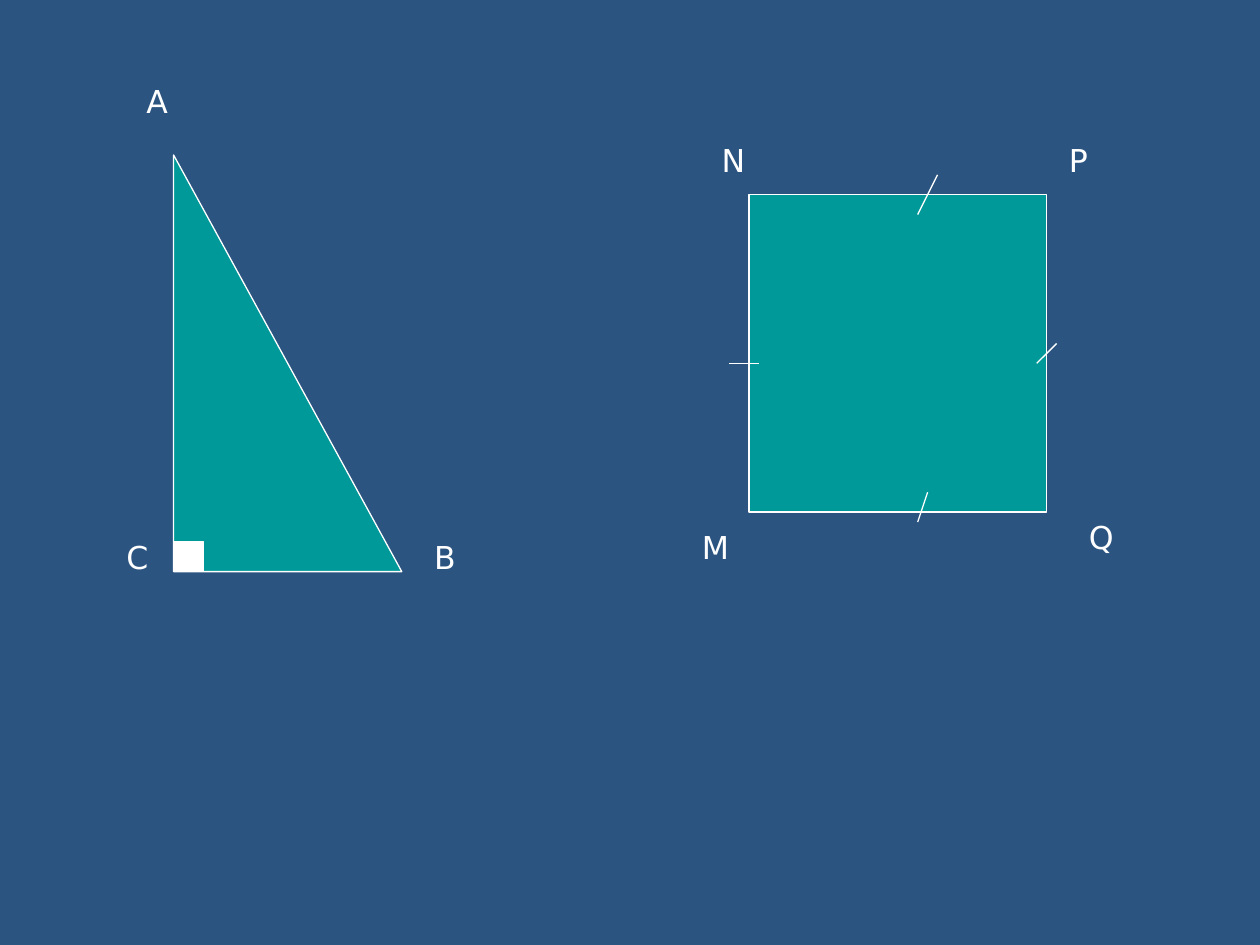
"""Draw a right triangle and a marked quadrilateral on a two-millimetre grid."""
from typing import NamedTuple

from lxml.etree import SubElement
from pptx import Presentation
from pptx.dml.color import RGBColor
from pptx.enum.shapes import MSO_CONNECTOR as Connector, MSO_SHAPE as Preset
from pptx.enum.text import MSO_AUTO_SIZE as AutoSize
from pptx.oxml.ns import qn
from pptx.shapes.shapetree import SlideShapes
from pptx.util import Inches, Mm, Pt

COLORS = {"background": "2B5481", "figure": "009999", "white": "FFFFFF"}
FONT = "DejaVu Sans"
CELL = Mm(2)
ORIGIN_COL, ORIGIN_ROW = 0.5, 0.62
LABEL_ROWS = 5


class Figure(NamedTuple):
    preset: Preset
    col: int
    row: int
    cols: int
    rows: int
    fill: str


class Vertex(NamedTuple):
    letter: str
    col: int
    row: int
    cols: int


class Tick(NamedTuple):
    start_col: int
    start_row: int
    end_col: int
    end_row: int


FIGURES = [
    Figure(Preset.RIGHT_TRIANGLE, 17, 15, 23, 42, "figure"),
    Figure(Preset.RECTANGLE, 75, 19, 30, 32, "figure"),
    Figure(Preset.RECTANGLE, 17, 54, 3, 3, "white"),
]
TRIANGLE_VERTICES = [
    Vertex("А", 13, 7, 6),
    Vertex("С", 11, 53, 6),
    Vertex("В", 42, 53, 6),
]
EQUAL_SIDE_TICKS = [
    Tick(73, 36, 76, 36),
    Tick(93, 49, 92, 52),
    Tick(104, 36, 106, 34),
    Tick(94, 17, 92, 21),
]
SQUARE_VERTICES = [
    Vertex("М", 69, 52, 5),
    Vertex("N", 71, 13, 5),
    Vertex("Р", 106, 13, 5),
    Vertex("Q", 108, 51, 5),
]


def color(name: str) -> RGBColor:
    return RGBColor.from_string(COLORS[name])


def x_at(col: int) -> int:
    return round((col + ORIGIN_COL) * CELL)


def y_at(row: int) -> int:
    return round((row + ORIGIN_ROW) * CELL)


def draw_figure(shapes: SlideShapes, figure: Figure) -> None:
    outline = shapes.add_shape(figure.preset, x_at(figure.col), y_at(figure.row),
                               figure.cols * CELL, figure.rows * CELL)
    outline.shadow.inherit = False
    outline.fill.solid()
    outline.fill.fore_color.rgb = color(figure.fill)
    outline.line.color.rgb = color("white")
    outline.line.width = Pt(0.75)


def draw_vertex(shapes: SlideShapes, vertex: Vertex) -> None:
    label = shapes.add_textbox(x_at(vertex.col), y_at(vertex.row),
                               vertex.cols * CELL, LABEL_ROWS * CELL)
    frame = label.text_frame
    frame.word_wrap = True
    frame.auto_size = AutoSize.SHAPE_TO_FIT_TEXT
    paragraph = frame.paragraphs[0]
    paragraph.text = vertex.letter
    paragraph.font.name = FONT
    paragraph.font.size = Pt(18)
    paragraph.font.color.rgb = color("white")


def draw_tick(shapes: SlideShapes, tick: Tick) -> None:
    mark = shapes.add_connector(Connector.STRAIGHT,
                                x_at(tick.start_col), y_at(tick.start_row),
                                x_at(tick.end_col), y_at(tick.end_row))
    mark.line.color.rgb = color("white")
    mark.line.width = Pt(0.75)
    SubElement(mark._element.spPr, qn("a:effectLst"))


def main() -> None:
    deck = Presentation()
    deck.slide_width, deck.slide_height = Inches(10), Inches(7.5)
    slide = deck.slides.add_slide(deck.slide_layouts[6])
    slide.background.fill.solid()
    slide.background.fill.fore_color.rgb = color("background")
    for figure in FIGURES:
        draw_figure(slide.shapes, figure)
    for vertex in TRIANGLE_VERTICES:
        draw_vertex(slide.shapes, vertex)
    for tick in EQUAL_SIDE_TICKS:
        draw_tick(slide.shapes, tick)
    for vertex in SQUARE_VERTICES:
        draw_vertex(slide.shapes, vertex)
    deck.save("out.pptx")


if __name__ == "__main__":
    main()
